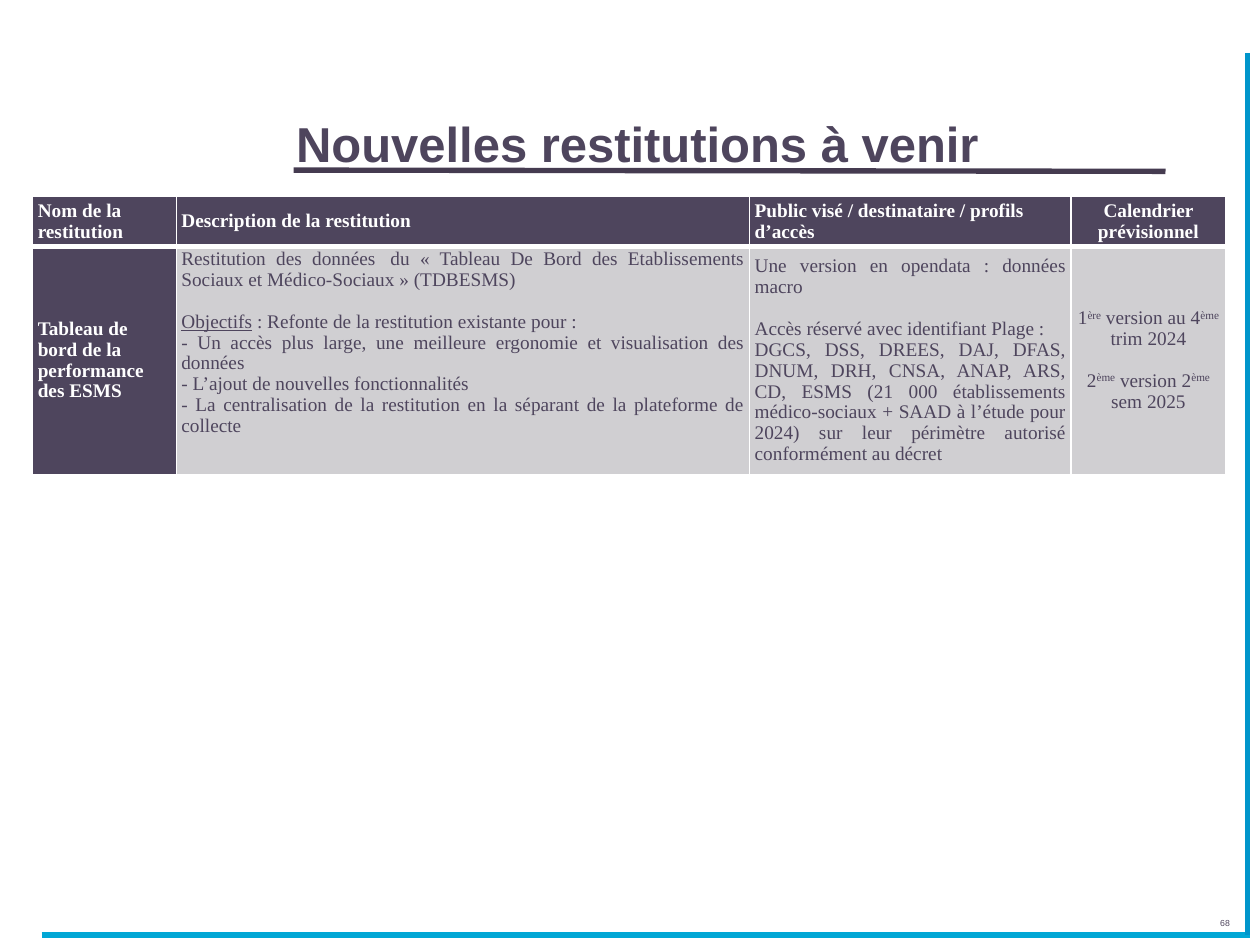
from dataclasses import dataclass
from typing import NamedTuple

from lxml.etree import SubElement as Sub
from pptx import Presentation
from pptx.dml.color import RGBColor as Rgb
from pptx.enum.shapes import MSO_CONNECTOR as Link
from pptx.enum.text import MSO_ANCHOR as Anchor, MSO_AUTO_SIZE as Fit, PP_ALIGN as Align
from pptx.oxml.ns import qn
from pptx.util import Inches, Pt


@dataclass(frozen=True)
class Theme:
    ink: str = "4E455D"
    rule: str = "453B50"
    foot: str = "02A7D5"
    side: str = "0095CB"
    pale: str = "D0CFD2"
    white: str = "FFFFFF"
    sans: str = "Arial"
    serif: str = "Times New Roman"
    head: float = 28
    body: float = 11
    page: float = 5
    pen: float = 3.06
    lead: float = 0.97
    gap: float = 12.2


class Run(NamedTuple):
    text: str
    under: bool = False
    base: int = 0


class Para(NamedTuple):
    runs: list[Run]
    gap: bool = False


class Cell(NamedTuple):
    paras: list[Para]
    align: Align = Align.LEFT
    anchor: Anchor = Anchor.MIDDLE
    label: bool = False


class Rule(NamedTuple):
    start: tuple[float, float]
    end: tuple[float, float]
    color: str


T = Theme()
COLS, ROWS = 100, 75
WIDE, HIGH = Inches(10), Inches(7.5)


def across(n: float) -> int:
    return round(WIDE * n / COLS)


def down(n: float) -> int:
    return round(HIGH * n / ROWS)


def place(shape, left: float, top: float, width: float, height: float) -> None:
    shape.left, shape.top = across(left), down(top)
    shape.width, shape.height = across(width), down(height)


def style(font, color: str, **form) -> None:
    for name, value in form.items():
        setattr(font, name, value)
    font.color.rgb = Rgb.from_string(color)


def plain(text: str, gap: bool = False) -> Para:
    return Para([Run(text)], gap)


def label(text: str, align: Align = Align.LEFT) -> Cell:
    return Cell([plain(text)], align, label=True)


def edge(cell, tag: str, width: float) -> None:
    props = cell._tc.get_or_add_tcPr()
    line = Sub(props, qn(f"a:{tag}"), w=str(Pt(width)))
    Sub(Sub(line, qn("a:solidFill")), qn("a:srgbClr"), val=T.white)


def draw_rule(slide, rule: Rule) -> None:
    (x1, y1), (x2, y2) = rule.start, rule.end
    line = slide.shapes.add_connector(
        Link.STRAIGHT, across(x1), down(y1), across(x2), down(y2))
    line.line.color.rgb = Rgb.from_string(rule.color)
    line.line.width = Pt(T.pen)
    Sub(line._element.spPr, qn("a:effectLst"))


def draw_cell(cell, data: Cell, low: float) -> None:
    form = dict(margin_left=across(0.4), margin_right=across(0.4),
                margin_top=down(0.2), margin_bottom=down(0.2),
                vertical_anchor=data.anchor)
    for name, value in form.items():
        setattr(cell, name, value)
    for tag in ("lnL", "lnR", "lnT"):
        edge(cell, tag, 1)
    edge(cell, "lnB", low)
    cell.fill.solid()
    cell.fill.fore_color.rgb = Rgb.from_string(T.ink if data.label else T.pale)
    frame = cell.text_frame
    for n, para in enumerate(data.paras):
        item = frame.add_paragraph() if n else frame.paragraphs[0]
        item.alignment = data.align
        item.line_spacing = T.lead
        if para.gap:
            item.space_before = Pt(T.gap)
        for part in para.runs:
            run = item.add_run()
            run.text = part.text
            style(run.font, T.white if data.label else T.ink, name=T.serif,
                  size=Pt(T.body), bold=data.label, underline=part.under)
            if part.base:
                run._r.get_or_add_rPr().set("baseline", str(part.base * 1000))


def draw_table(slide, grid: list[list[Cell]], wide: list[float], high: list[float]) -> None:
    table = slide.shapes.add_table(
        len(grid), len(wide), across(2.6), down(15.6),
        across(sum(wide)), down(sum(high))).table
    for col, size in zip(table.columns, wide):
        col.width = across(size)
    for n, (row, size) in enumerate(zip(grid, high)):
        table.rows[n].height = down(size)
        for k, data in enumerate(row):
            draw_cell(table.cell(n, k), data, 1 if n else 3)


def draw_title(slide, text: str) -> None:
    title = slide.shapes.title
    place(title, 22.5, 3.3, 66.7, 10.9)
    frame = title.text_frame
    frame.text = text
    form = dict(auto_size=Fit.NONE, vertical_anchor=Anchor.BOTTOM, word_wrap=True)
    for name, value in form.items():
        setattr(frame, name, value)
    frame.paragraphs[0].alignment = Align.LEFT
    style(frame.paragraphs[0].runs[0].font, T.ink, name=T.sans, size=Pt(T.head), bold=True)


def draw_page(slide, text: str) -> None:
    box = slide.shapes.add_textbox(0, 0, 0, 0)
    place(box, 94.5, 71.5, 4.1, 2.7)
    frame = box.text_frame
    frame.word_wrap = True
    frame.vertical_anchor = Anchor.BOTTOM
    frame.text = text
    frame.paragraphs[0].alignment = Align.RIGHT
    style(frame.paragraphs[0].runs[0].font, T.ink, name=T.sans, size=Pt(T.page))


RULES = [
    Rule((23.3, 13.5), (92.5, 13.6), T.rule),
    Rule((3.3, 74.2), (99.2, 74.2), T.foot),
    Rule((99, 74.2), (99, 4.2), T.side),
]

GOALS = Cell([
    plain("Restitution des données\u00a0 du « Tableau De Bord des Etablissements "
          "Sociaux et Médico-Sociaux » (TDBESMS)"),
    Para([Run("Objectifs", under=True),
          Run(" : Refonte de la restitution existante pour :")], gap=True),
    plain("- Un accès plus large, une meilleure ergonomie et visualisation des données"),
    plain("- L’ajout de nouvelles fonctionnalités"),
    plain("- La centralisation de la restitution en la séparant de la plateforme de collecte"),
], Align.JUSTIFY, Anchor.TOP)

USERS = Cell([
    plain("Une version en opendata : données macro"),
    plain("Accès réservé avec identifiant Plage :", gap=True),
    plain("DGCS, DSS, DREES, DAJ, DFAS, DNUM, DRH, CNSA, ANAP, ARS, CD, ESMS "
          "(21 000 établissements médico-sociaux + SAAD à l’étude pour 2024) "
          "sur leur périmètre autorisé conformément au décret"),
], Align.JUSTIFY)

DATES = Cell([
    Para([Run("1"), Run("ère", base=30), Run(" version au 4"),
          Run("ème", base=30), Run(" trim 2024")]),
    Para([Run("2"), Run("ème", base=30), Run(" version 2"),
          Run("ème", base=30), Run(" sem 2025")], gap=True),
], Align.CENTER)

GRID = [
    [label("Nom de la restitution"), label("Description de la restitution"),
     label("Public visé / destinataire / profils d’accès"),
     label("Calendrier prévisionnel", Align.CENTER)],
    [label("Tableau de bord de la performance des ESMS"), GOALS, USERS, DATES],
]


def main() -> None:
    deck = Presentation()
    deck.slide_width, deck.slide_height = WIDE, HIGH
    slide = deck.slides.add_slide(deck.slide_layouts[5])
    for rule in RULES:
        draw_rule(slide, rule)
    draw_title(slide, "Nouvelles restitutions à venir")
    draw_page(slide, "68")
    draw_table(slide, GRID, [11.4, 45.5, 25.5, 12.3], [3.8, 17.3])
    deck.save("out.pptx")


if __name__ == "__main__":
    main()
